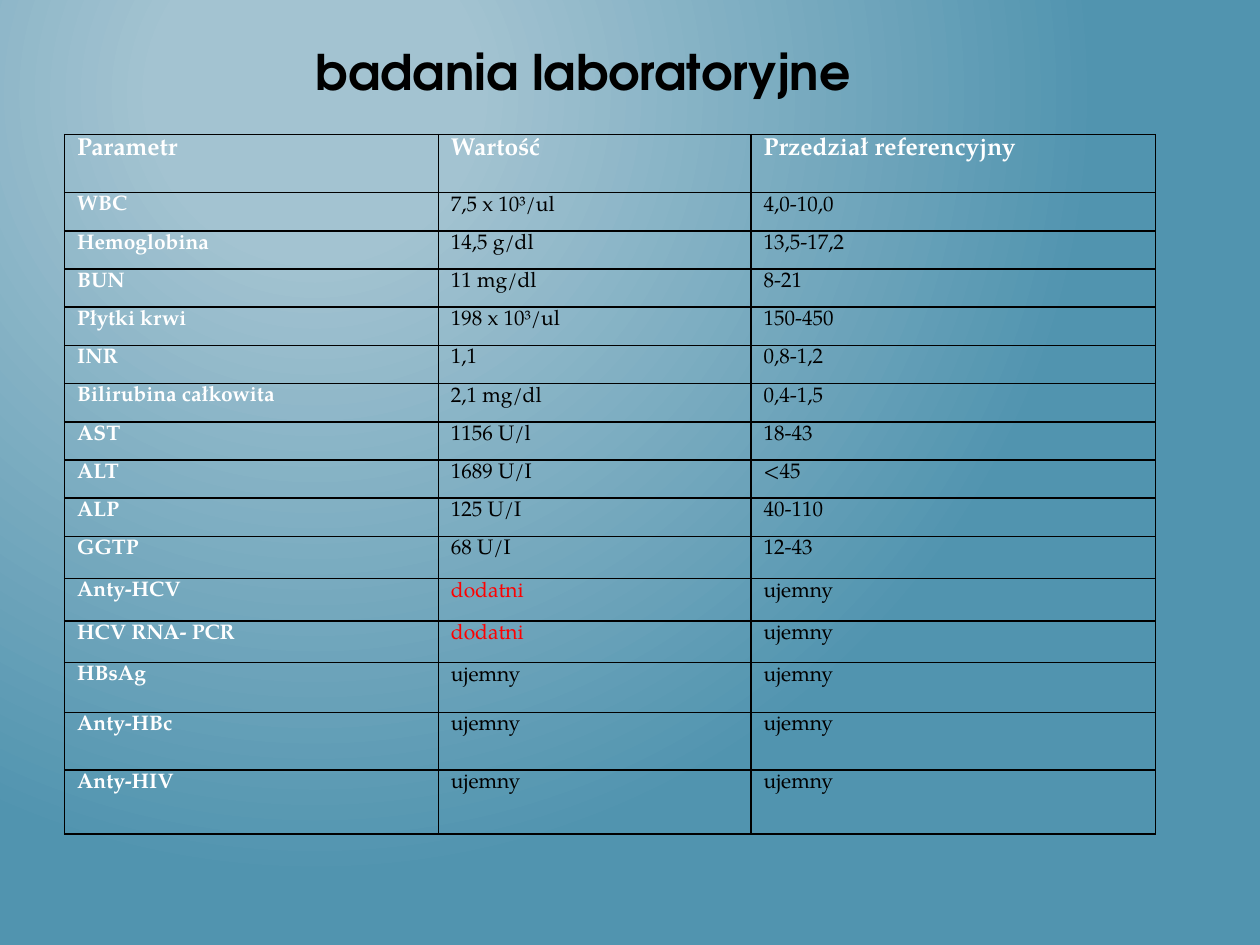
from lxml import etree
from pptx import Presentation
from pptx.dml.color import RGBColor
from pptx.enum.text import MSO_ANCHOR, PP_ALIGN
from pptx.oxml.ns import qn
from pptx.util import Pt

LEFT = PP_ALIGN.LEFT
BOTTOM = MSO_ANCHOR.BOTTOM
TITLE_ONLY = 5

BLACK = RGBColor(0x00, 0x00, 0x00)
WHITE = RGBColor(0xFF, 0xFF, 0xFF)
RED = RGBColor(0xFF, 0x00, 0x00)
PALE_BLUE = RGBColor(0xA3, 0xC3, 0xD1)
DEEP_BLUE = RGBColor(0x51, 0x94, 0xAF)

TITLE_FONT = "TeX Gyre Adventor"
TABLE_FONT = "TeX Gyre Pagella"

COLUMN_WIDTHS = [213.6, 178.7, 231.2]
ROW_HEIGHTS = [33.1] + [21.85] * 9 + [24.2, 24.2, 23.8, 28.4, 33, 36.6]
POSITIVE = "dodatni"
RESULTS = [
    ("Parametr", "Wartość", "Przedział referencyjny"),
    ("WBC", "7,5 x 10³/ul", "4,0-10,0"),
    ("Hemoglobina", "14,5 g/dl", "13,5-17,2"),
    ("BUN", "11 mg/dl", "8-21"),
    ("Płytki krwi", "198 x 10³/ul", "150-450"),
    ("INR", "1,1", "0,8-1,2"),
    ("Bilirubina całkowita", "2,1 mg/dl", "0,4-1,5"),
    ("AST", "1156 U/l", "18-43"),
    ("ALT", "1689 U/I", "<45"),
    ("ALP", "125 U/I", "40-110"),
    ("GGTP", "68 U/I", "12-43"),
    ("Anty-HCV", POSITIVE, "ujemny"),
    ("HCV RNA- PCR", POSITIVE, "ujemny"),
    ("HBsAg", "ujemny", "ujemny"),
    ("Anty-HBc", "ujemny", "ujemny"),
    ("Anty-HIV", "ujemny", "ujemny"),
]


def set_font(paragraph, name, size, color, bold):
    font = paragraph.font
    font.name = name
    font.size = Pt(size)
    font.color.rgb = color
    font.bold = bold


def paint_background(slide):
    """Fill the slide with a circular gradient, palest at the upper left."""
    fill = slide.background.fill
    fill.gradient()
    stops = zip(fill.gradient_stops, (0.2, 1), (PALE_BLUE, DEEP_BLUE))
    for stop, position, color in stops:
        stop.position = position
        stop.color.rgb = color
    gradient = slide.element.find(".//" + qn("a:gradFill"))
    gradient.remove(gradient.find(qn("a:lin")))
    circle = etree.SubElement(gradient, qn("a:path"), path="circle")
    etree.SubElement(circle, qn("a:fillToRect"),
                     l="50000", t="20000", r="100000", b="100000")


def place_title(slide, left, top, width, height):
    title = slide.shapes.title
    title.left, title.top = Pt(left), Pt(top)
    title.width, title.height = Pt(width), Pt(height)
    frame = title.text_frame
    frame.text = "badania laboratoryjne"
    frame.vertical_anchor = BOTTOM
    frame.margin_left = Pt(115)
    paragraph = frame.paragraphs[0]
    paragraph.alignment = LEFT
    set_font(paragraph, TITLE_FONT, 28, BLACK, True)


def outline_cell(cell):
    properties = cell._tc.get_or_add_tcPr()
    for index, side in enumerate(("lnL", "lnR", "lnT", "lnB")):
        line = etree.Element(qn("a:" + side), w=str(Pt(1)))
        fill = etree.SubElement(line, qn("a:solidFill"))
        etree.SubElement(fill, qn("a:srgbClr"), val=str(BLACK))
        properties.insert(index, line)


def fill_cell(cell, text, size, color, bold):
    cell.margin_top = cell.margin_bottom = 0
    cell.fill.background()
    outline_cell(cell)
    cell.text = text
    paragraph = cell.text_frame.paragraphs[0]
    paragraph.line_spacing = 1.15
    set_font(paragraph, TABLE_FONT, size, color, bold)


def place_results_table(slide, left, top):
    frame = slide.shapes.add_table(
        len(RESULTS), len(COLUMN_WIDTHS), Pt(left), Pt(top),
        Pt(sum(COLUMN_WIDTHS)), Pt(sum(ROW_HEIGHTS)))
    table = frame.table
    table.horz_banding = False
    for column, width in zip(table.columns, COLUMN_WIDTHS):
        column.width = Pt(width)
    for row, height in zip(table.rows, ROW_HEIGHTS):
        row.height = Pt(height)
    for row_index, values in enumerate(RESULTS):
        for column_index, text in enumerate(values):
            is_heading = row_index == 0 or column_index == 0
            if is_heading:
                color = WHITE
            else:
                color = RED if text == POSITIVE else BLACK
            fill_cell(table.cell(row_index, column_index), text,
                      14 if row_index == 0 else 12, color, is_heading)


def main():
    presentation = Presentation()
    presentation.slide_width, presentation.slide_height = Pt(720), Pt(540)
    slide = presentation.slides.add_slide(
        presentation.slide_layouts[TITLE_ONLY])
    paint_background(slide)
    place_title(slide, 65.5, 12.2, 485.3, 49)
    place_results_table(slide, 36.9, 77)
    presentation.save("out.pptx")


if __name__ == "__main__":
    main()
